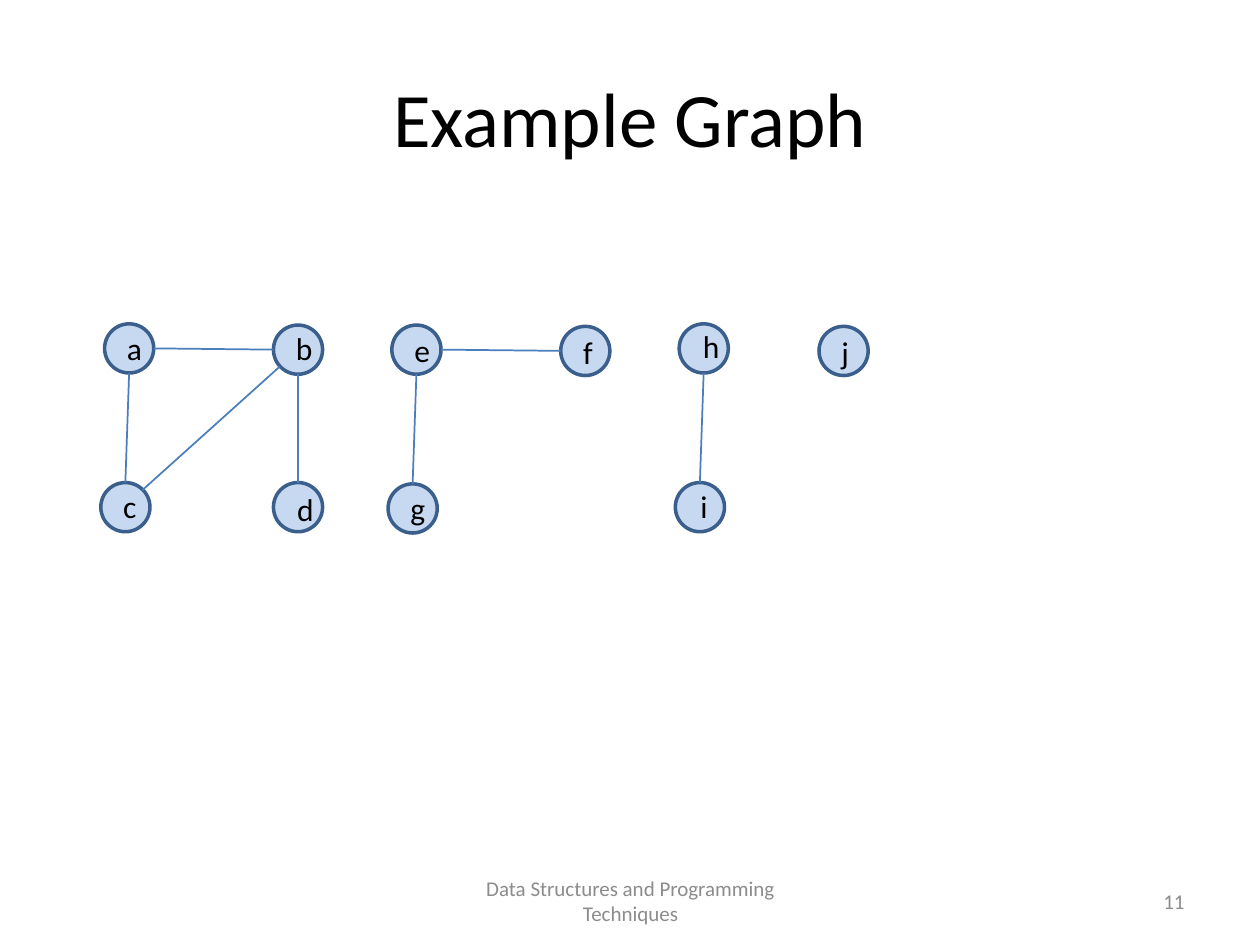
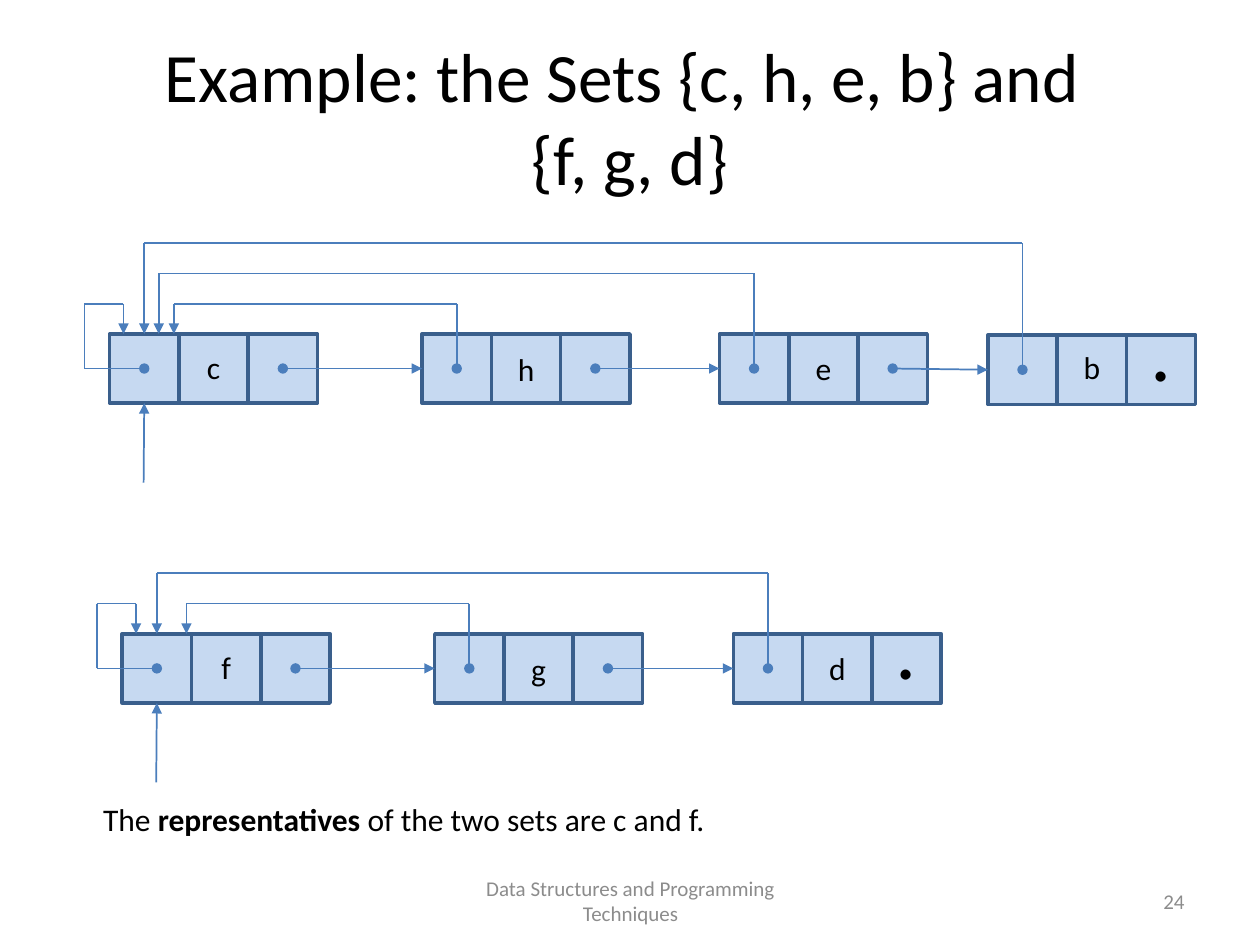
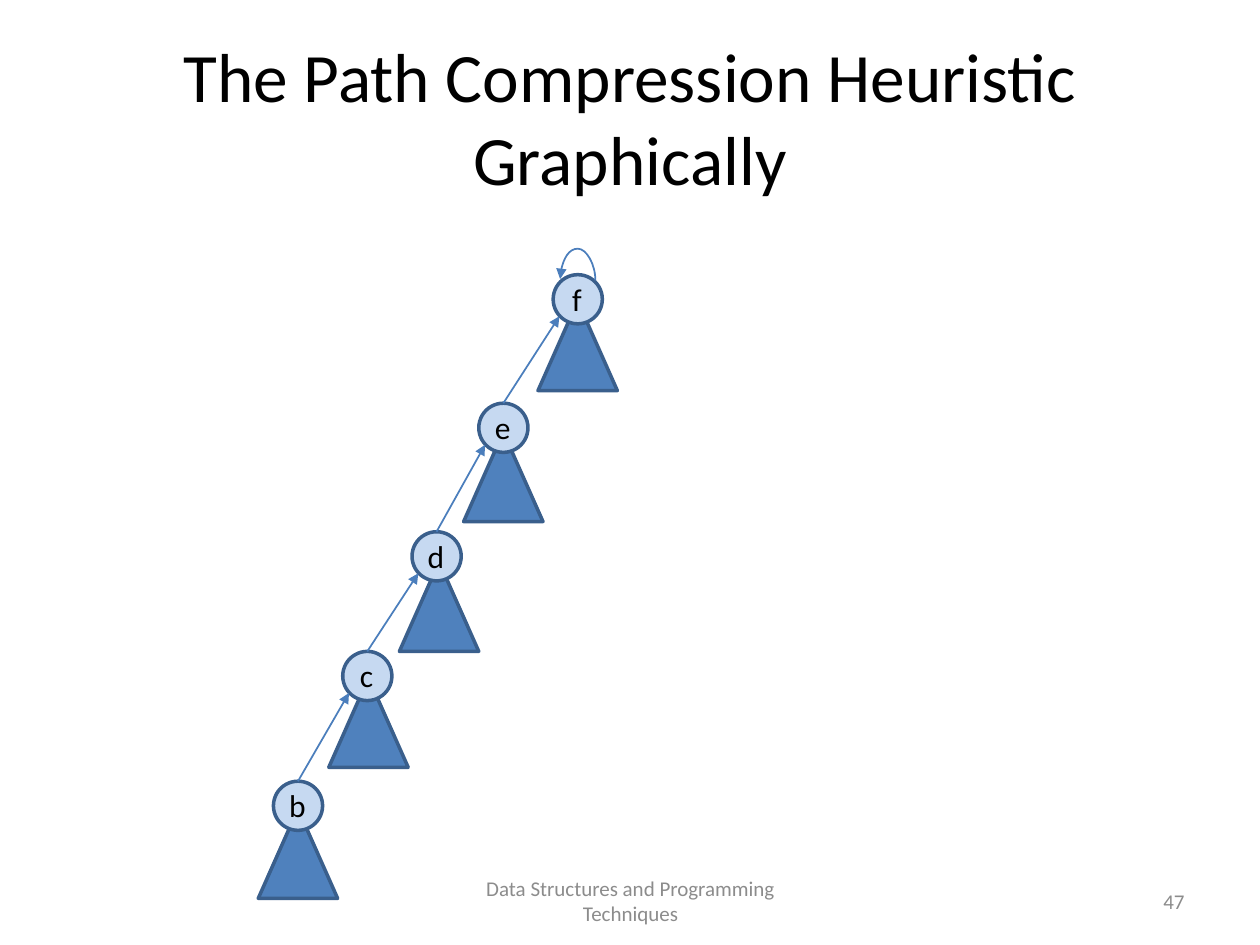
from lxml.etree import SubElement
from pptx import Presentation
from pptx.dml.color import RGBColor
from pptx.enum.shapes import MSO_CONNECTOR, MSO_SHAPE
from pptx.enum.text import MSO_ANCHOR, MSO_AUTO_SIZE, PP_ALIGN
from pptx.oxml.ns import qn
from pptx.util import Inches, Pt

BLACK = RGBColor(0x00, 0x00, 0x00)
GRAY = RGBColor(0x8C, 0x8C, 0x8C)
PALE = RGBColor(0xC6, 0xD9, 0xF1)
BLUE = RGBColor(0x4F, 0x81, 0xBD)
EDGE = RGBColor(0x3A, 0x5F, 0x8C)
LINK = RGBColor(0x4B, 0x7E, 0xBC)
FONT = "Calibri"
FOOTER = "Data Structures and Programming Techniques"

DISC = 0.39
CELL = 0.55
STEP = 0.24
SITES = {
    "top": (0.195, 0), "bottom": (0.195, 0.39),
    "left": (0, 0.195), "right": (0.39, 0.195),
    "low left": (0.05, 0.33), "high right": (0.33, 0.06),
}

GRAPH = {
    "a": (0.83, 2.57, 0.08, -0.01),
    "b": (2.17, 2.58, 0.08, -0.02),
    "c": (0.8, 3.83, 0.08, -0.01),
    "d": (2.17, 3.83, 0.09, 0.01),
    "e": (3.11, 2.58, 0.08, 0),
    "f": (4.45, 2.59, 0.08, 0),
    "g": (3.08, 3.84, 0.08, -0.01),
    "h": (5.39, 2.57, 0.09, -0.02),
    "i": (5.36, 3.83, 0.1, -0.01),
    "j": (6.5, 2.59, 0.08, 0),
}
EDGES = [
    ("a", "right", "b", "left"), ("a", "bottom", "c", "top"),
    ("b", "bottom", "d", "top"), ("b", "low left", "c", "high right"),
    ("e", "right", "f", "left"), ("e", "bottom", "g", "top"),
    ("h", "bottom", "i", "top"),
]

LISTS = [
    {"nodes": [("c", 0.87, 2.65, 0.06), ("h", 3.35, 2.65, 0.08),
               ("e", 5.71, 2.65, 0.07), ("b", 7.84, 2.66, 0.05)],
     "lands": [0.51, 0.39, CELL / 2]},
    {"nodes": [("f", 0.97, 5.03, 0.06), ("g", 3.45, 5.03, 0.08),
               ("d", 5.82, 5.03, 0.07)],
     "lands": [0.51, CELL / 2]},
]
NOTE = [("The ", False), ("representatives", True),
        (" of the two sets are c and f.", False)]

CHAIN = [
    ("f", (4.39, 2.18), (4.27, 2.39)),
    ("e", (3.8, 3.2), (3.68, 3.43)),
    ("d", (3.27, 4.22), (3.17, 4.46)),
    ("c", (2.72, 5.17), (2.61, 5.38)),
    ("b", (2.17, 6.2), (2.05, 6.42)),
]


def style(frame, size, color=BLACK, align=PP_ALIGN.CENTER):
    for para in frame.paragraphs:
        para.alignment = align
        for run in para.runs:
            run.font.name = FONT
            run.font.size = Pt(size)
            run.font.color.rgb = color


def write(slide, text, box, size=18, color=BLACK, align=PP_ALIGN.CENTER,
          anchor=MSO_ANCHOR.TOP):
    frame = slide.shapes.add_textbox(*map(Inches, box)).text_frame
    frame.word_wrap = True
    frame.vertical_anchor = anchor
    frame.text = text
    style(frame, size, color, align)
    return frame


def draw(slide, kind, left, top, width, height, fill=PALE):
    shape = slide.shapes.add_shape(kind, *map(Inches, (left, top, width, height)))
    shape.shadow.inherit = False
    shape.fill.solid()
    shape.fill.fore_color.rgb = fill
    shape.line.color.rgb = EDGE
    shape.line.width = Pt(2)
    return shape


def link(slide, start, end, head=None, tail=None, kind=MSO_CONNECTOR.STRAIGHT):
    line = slide.shapes.add_connector(kind, *map(Inches, (*start, *end)))
    line.line.color.rgb = LINK
    line.line.width = Pt(1)
    props = line.element.spPr
    stroke = props.find(qn("a:ln"))
    for tag, mark in (("a:headEnd", head), ("a:tailEnd", tail)):
        if mark:
            SubElement(stroke, qn(tag)).set("type", mark)
    SubElement(props, qn("a:effectLst"))
    return line


def trace(slide, points):
    last = len(points) - 2
    for i, (start, end) in enumerate(zip(points, points[1:])):
        line = link(slide, start, end, None if i else "oval",
                    "triangle" if i == last else None)
    return line


def site(x, y, name):
    dx, dy = SITES[name]
    return x + dx, y + dy


def disc(slide, x, y):
    draw(slide, MSO_SHAPE.OVAL, x, y, DISC, DISC)


def start(deck, title, size, number):
    slide = deck.slides.add_slide(deck.slide_layouts[5])
    head = slide.shapes.title
    head.left, head.top, head.width, head.height = map(Inches, (0.5, 0.3, 9, 1.25))
    frame = head.text_frame
    frame.text = title
    frame.auto_size = MSO_AUTO_SIZE.NONE
    frame.vertical_anchor = MSO_ANCHOR.MIDDLE
    style(frame, size)
    write(slide, FOOTER, (3.42, 6.95, 3.17, 0.4), 12, GRAY,
          anchor=MSO_ANCHOR.MIDDLE)
    write(slide, str(number), (7.17, 6.95, 2.33, 0.4), 12, GRAY,
          PP_ALIGN.RIGHT, MSO_ANCHOR.MIDDLE)
    return slide


def add_graph(deck):
    slide = start(deck, "Example Graph", 44, 11)
    for x, y, dx, dy in GRAPH.values():
        disc(slide, x, y)
    for one, out, two, into in EDGES:
        link(slide, site(*GRAPH[one][:2], out), site(*GRAPH[two][:2], into))
    for name, (x, y, dx, dy) in GRAPH.items():
        write(slide, name, (x + dx, y + dy, 0.23, 0.4))


def add_list(slide, nodes, lands):
    half = CELL / 2
    cells = [[draw(slide, MSO_SHAPE.RECTANGLE, x + i * CELL, y, CELL, CELL)
              for i in range(3)] for name, x, y, dy in nodes]
    first = cells[0][0]
    left, top = nodes[0][1:3]

    for (name, x, y, dy), (new, nx, ny, ndy), row in zip(nodes, nodes[1:], cells[1:]):
        line = link(slide, (x + 2.5 * CELL, y + half), (nx, ny + half),
                    "oval", "triangle")
        line.end_connect(row[0], 1)

    for i, ((name, x, y, dy), land) in enumerate(zip(nodes[1:], lands), 1):
        level = top - i * STEP
        line = trace(slide, [(x + half, y + half), (x + half, level),
                             (left + land, level), (left + land, top)])
        if land == half:
            line.end_connect(first, 0)

    trace(slide, [(left + half, top + half), (left - 0.2, top + half),
                  (left - 0.2, top - STEP), (left + 0.11, top - STEP),
                  (left + 0.11, top)])
    entry = link(slide, (left + 0.27, top + 1.18), (left + half, top + CELL),
                 tail="triangle")
    entry.end_connect(first, 2)

    for name, x, y, dy in nodes:
        write(slide, name, (x + CELL, y + dy, CELL, 0.4))
    write(slide, ".", (x + 2 * CELL, y - 0.35, CELL, 0.91), 48)


def add_sets(deck):
    slide = start(deck, "Example: the Sets {c, h, e, b} and \v{f, g, d}", 39.6, 24)
    for item in LISTS:
        add_list(slide, item["nodes"], item["lands"])
    frame = write(slide, "", (0.72, 6.3, 7.17, 0.4))
    for text, bold in NOTE:
        run = frame.paragraphs[0].add_run()
        run.text = text
        run.font.bold = bold
    style(frame, 18, align=PP_ALIGN.LEFT)


def add_chain(deck):
    slide = start(deck, "The Path Compression Heuristic Graphically", 39.6, 47)
    for name, spot, tree in CHAIN:
        draw(slide, MSO_SHAPE.ISOSCELES_TRIANGLE, *tree, 0.63, 0.71, BLUE)
    for name, spot, tree in CHAIN:
        disc(slide, *spot)
    for above, below in zip(CHAIN, CHAIN[1:]):
        link(slide, site(*below[1], "top"), site(*above[1], "low left"),
             tail="triangle")
    for name, (x, y), tree in CHAIN:
        write(slide, name, (x + 0.02, y - 0.01, 0.34, 0.4))

    loop = link(slide, (4.58, 2.36), (4.59, 2.08), tail="triangle",
                kind=MSO_CONNECTOR.CURVE)
    props = loop.element.spPr
    props.find(qn("a:xfrm")).set("rot", str(270 * 60000))
    form = props.find(qn("a:prstGeom"))
    bends = form.find(qn("a:avLst"))
    if bends is None:
        bends = SubElement(form, qn("a:avLst"))
    bend = SubElement(bends, qn("a:gd"))
    bend.set("name", "adj1")
    bend.set("fmla", "val 2550000")


def main():
    deck = Presentation()
    deck.slide_width, deck.slide_height = Inches(10), Inches(7.5)
    add_graph(deck)
    add_sets(deck)
    add_chain(deck)
    deck.save("out.pptx")


if __name__ == "__main__":
    main()
